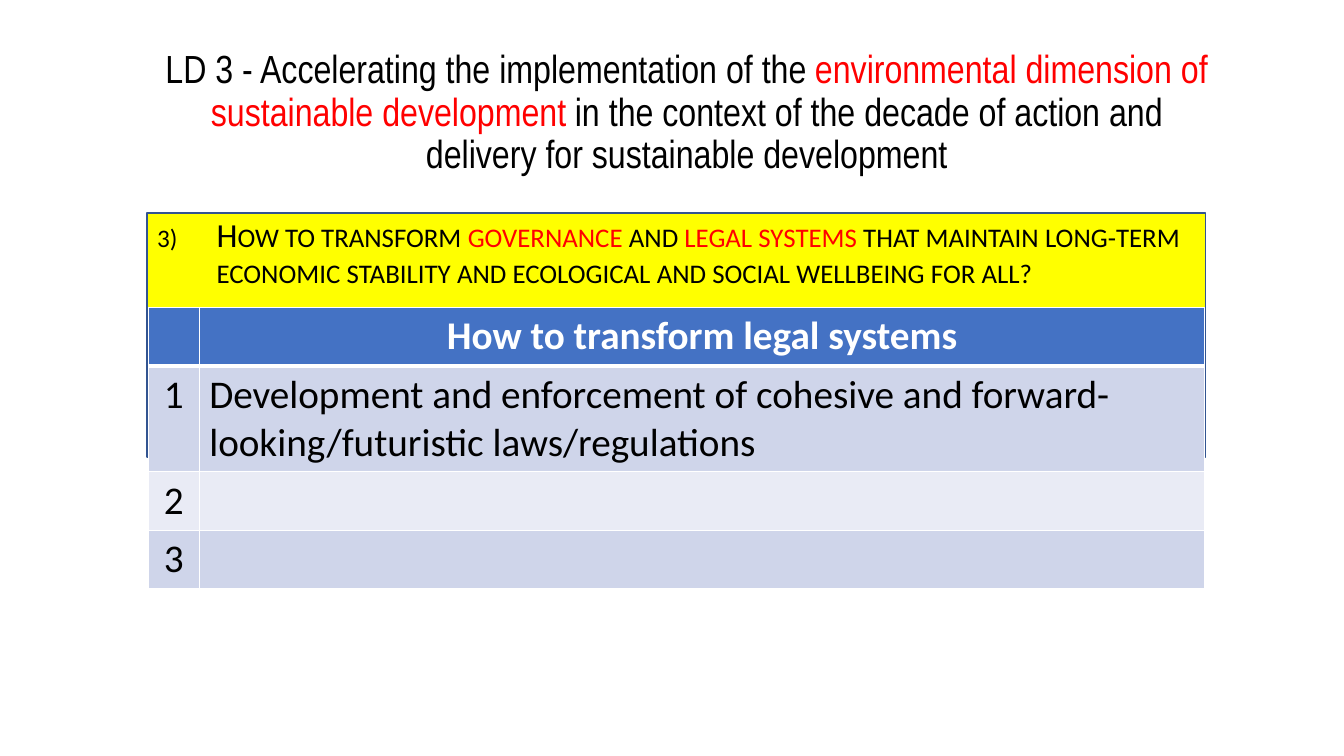
from lxml.etree import SubElement
from pptx import Presentation
from pptx.dml.color import RGBColor
from pptx.enum.shapes import MSO_SHAPE
from pptx.enum.text import MSO_ANCHOR, MSO_AUTO_SIZE, PP_ALIGN
from pptx.oxml import parse_xml
from pptx.oxml.ns import nsdecls, qn
from pptx.util import Cm, Pt

# Content: text runs are (text, colour name)
COLOURS = {
    "black": "000000", "red": "FF0000", "white": "FFFFFF", "yellow": "FFFF00",
    "outline": "325491", "header": "4472C4", "odd": "CFD5EA", "even": "E9EBF5",
}
TITLE = [
    ("LD 3 - Accelerating the implementation of the ", "black"),
    ("environmental dimension of sustainable development ", "red"),
    ("in the context of the decade of action and delivery for sustainable development", "black"),
]
QUESTION = [
    ("How to transform ", "black"),
    ("governance", "red"),
    (" and ", "black"),
    ("legal systems ", "red"),
    ("that maintain long-term economic stability and ecological and social wellbeing for all?", "black"),
]
ROWS = [
    ("", "How to transform legal systems"),
    ("1", "Development and enforcement of cohesive and forward-looking/futuristic laws/regulations"),
    ("2", ""),
    ("3", ""),
]
COLUMN_WIDTHS = [1.28, 25.34]
ROW_HEIGHTS = [1.47, 2.67, 1.47, 1.47]


def colour(name):
    return RGBColor.from_string(COLOURS[name])


def add_runs(paragraph, runs, size, font_name):
    paragraph.font.size = Pt(size)
    paragraph.font.name = font_name
    for text, colour_name in runs:
        run = paragraph.add_run()
        run.text = text
        run.font.color.rgb = colour(colour_name)


def set_borders(cell, bottom_width):
    properties = cell._tc.get_or_add_tcPr()
    widths = {"lnL": 1, "lnR": 1, "lnT": 1, "lnB": bottom_width}
    for index, (side, width) in enumerate(widths.items()):
        properties.insert(index, parse_xml(
            f'<a:{side} {nsdecls("a")} w="{Pt(width)}"><a:solidFill>'
            f'<a:srgbClr val="{COLOURS["white"]}"/></a:solidFill></a:{side}>'))


presentation = Presentation()
presentation.slide_width, presentation.slide_height = Cm(33.87), Cm(19.05)
slide = presentation.slides.add_slide(presentation.slide_layouts[5])
shapes = slide.shapes

# Title
title = shapes.title
title.left, title.top, title.width, title.height = Cm(3.71), Cm(1.02), Cm(27.18), Cm(3.68)
title.text_frame.vertical_anchor = MSO_ANCHOR.MIDDLE
title.text_frame.auto_size = MSO_AUTO_SIZE.NONE
paragraph = title.text_frame.paragraphs[0]
paragraph.alignment = PP_ALIGN.CENTER
paragraph.line_spacing = 0.9
add_runs(paragraph, TITLE, 28, "Arial Narrow")

# Yellow panel
panel = shapes.add_shape(MSO_SHAPE.RECTANGLE, Cm(3.71), Cm(5.37), Cm(26.67), Cm(6.15))
panel.shadow.inherit = False
panel.fill.solid()
panel.fill.fore_color.rgb = colour("yellow")
panel.line.color.rgb = colour("outline")
panel.line.width = Pt(1)

# Numbered question in small capitals
question = shapes.add_textbox(Cm(3.71), Cm(5.37), Cm(27.84), Cm(13.54))
question.text_frame.word_wrap = True
paragraph = question.text_frame.paragraphs[0]
paragraph.line_spacing = 0.9
paragraph.space_before = Pt(10)
add_runs(paragraph, QUESTION, 24, "Calibri")
for run in paragraph.runs:
    run.font._element.set("cap", "small")
properties = paragraph._p.get_or_add_pPr()
properties.set("marL", str(Cm(1.5)))
properties.set("indent", str(-Cm(1.5)))
bullet_size = SubElement(properties, qn("a:buSzPct"), val="75000")
bullet_number = SubElement(properties, qn("a:buAutoNum"), type="arabicParenR", startAt="3")
default_font = properties.find(qn("a:defRPr"))
default_font.addprevious(bullet_size)
default_font.addprevious(bullet_number)

# Answer table
table = shapes.add_table(len(ROWS), len(COLUMN_WIDTHS), Cm(3.74), Cm(7.75),
                         Cm(sum(COLUMN_WIDTHS)), Cm(sum(ROW_HEIGHTS))).table
for column, width in zip(table.columns, COLUMN_WIDTHS):
    column.width = Cm(width)
for row_index, (row, height) in enumerate(zip(table.rows, ROW_HEIGHTS)):
    row.height = Cm(height)
    is_header = row_index == 0
    fill = "header" if is_header else ("odd" if row_index % 2 else "even")
    for column_index, (cell, text) in enumerate(zip(row.cells, ROWS[row_index])):
        cell.fill.solid()
        cell.fill.fore_color.rgb = colour(fill)
        set_borders(cell, 3 if is_header else 1)
        paragraph = cell.text_frame.paragraphs[0]
        if is_header or column_index == 0:
            paragraph.alignment = PP_ALIGN.CENTER
        paragraph.font.bold = is_header
        if text:
            add_runs(paragraph, [(text, "white" if is_header else "black")], 28, "Calibri")

presentation.save("out.pptx")
